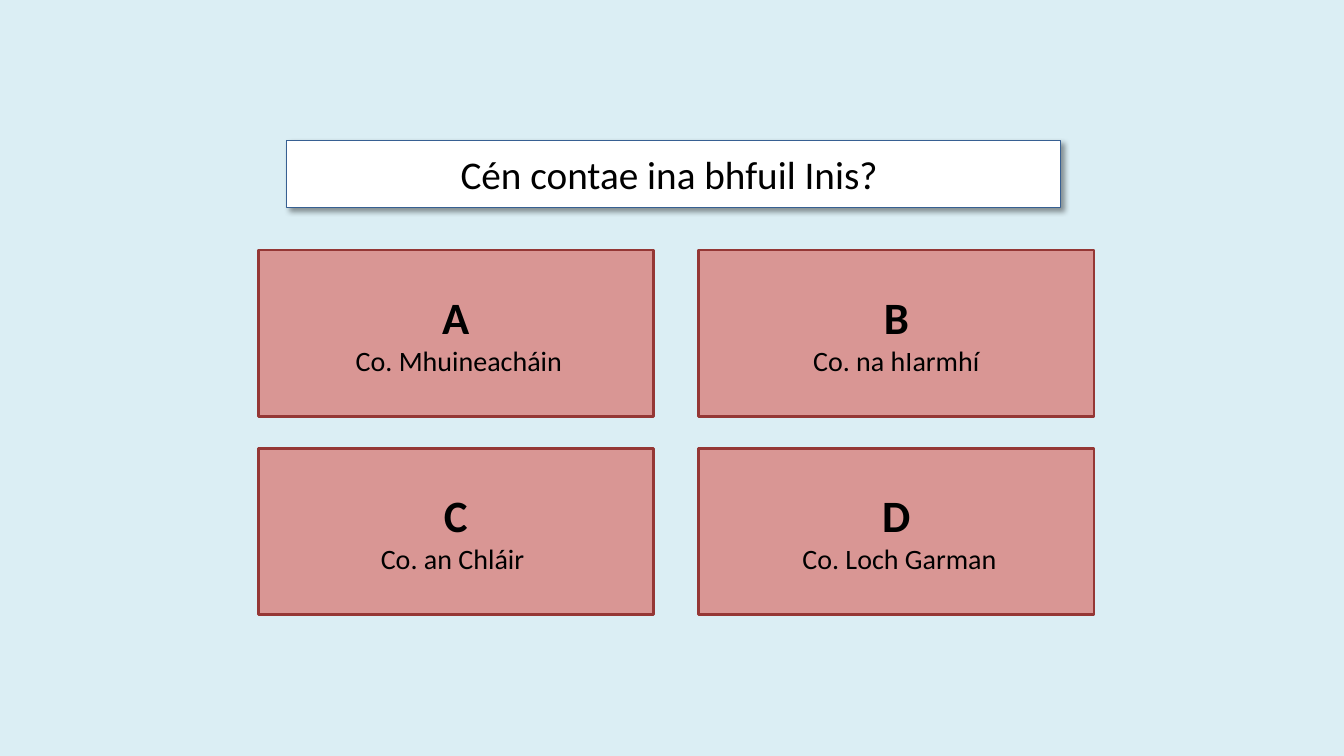
from lxml.etree import SubElement
from pptx import Presentation
from pptx.dml.color import RGBColor
from pptx.enum.shapes import MSO_SHAPE as Preset
from pptx.enum.text import MSO_ANCHOR as Anchor, PP_ALIGN as Align
from pptx.oxml.ns import qn
from pptx.util import Inches, Pt

COLOURS = {
    "background": "DBEEF4",
    "answer": "D99694",
    "answer_edge": "953735",
    "question": "FFFFFF",
    "question_edge": "376092",
    "text": "000000",
    "shadow": "000000",
}
QUESTION = "Cén contae ina bhfuil Inis? "
ANSWERS = {
    "A": " Co. Mhuineacháin",
    "B": " Co. na hIarmhí ",
    "C": "Co. an Chláir ",
    "D": " Co. Loch Garman",
}
COLUMNS, ROWS = 2, 2
COLUMN_GAP, ROW_GAP = 0.45, 0.32


def colour(name):
    return RGBColor.from_string(COLOURS[name])


def add_panel(slide, box, fill, edge, edge_width):
    panel = slide.shapes.add_shape(Preset.RECTANGLE, *map(Inches, box))
    panel.shadow.inherit = False
    panel.fill.solid()
    panel.fill.fore_color.rgb = colour(fill)
    panel.line.color.rgb = colour(edge)
    panel.line.width = Pt(edge_width)
    panel.text_frame.word_wrap = True
    panel.text_frame.vertical_anchor = Anchor.MIDDLE
    return panel


def write(paragraph, text, size, bold=False, before=0):
    paragraph.alignment = Align.CENTER
    paragraph.space_before = Pt(before)
    run = paragraph.add_run()
    run.text = text
    run.font.name = "Calibri"
    run.font.size = Pt(size)
    run.font.bold = bold
    run.font.color.rgb = colour("text")


def cast_shadow(panel):
    effects = panel.element.spPr.find(qn("a:effectLst"))
    shadow = SubElement(effects, qn("a:outerShdw"), blurRad=str(Pt(4)),
                        dist=str(Pt(3)), dir="2700000", algn="tl", rotWithShape="0")
    tint = SubElement(shadow, qn("a:srgbClr"), val=COLOURS["shadow"])
    SubElement(tint, qn("a:alpha"), val="40000")


def add_question(slide, box):
    panel = add_panel(slide, box, "question", "question_edge", 0.75)
    cast_shadow(panel)
    write(panel.text_frame.paragraphs[0], QUESTION, 28, before=5.6)


def add_answers(slide, box):
    left, top, width, height = box
    card_width = (width - (COLUMNS - 1) * COLUMN_GAP) / COLUMNS
    card_height = (height - (ROWS - 1) * ROW_GAP) / ROWS
    for index, (letter, county) in enumerate(ANSWERS.items()):
        row, column = divmod(index, COLUMNS)
        card_box = (left + column * (card_width + COLUMN_GAP),
                    top + row * (card_height + ROW_GAP), card_width, card_height)
        card = add_panel(slide, card_box, "answer", "answer_edge", 2)
        write(card.text_frame.paragraphs[0], letter, 32, bold=True)
        write(card.text_frame.add_paragraph(), county, 20)


def main():
    deck = Presentation()
    deck.slide_width, deck.slide_height = Inches(13.33), Inches(7.5)
    slide = deck.slides.add_slide(deck.slide_layouts[6])
    slide.background.fill.solid()
    slide.background.fill.fore_color.rgb = colour("background")
    add_answers(slide, (2.56, 2.48, 8.29, 3.62))
    add_question(slide, (2.84, 1.39, 7.68, 0.67))
    deck.save("out.pptx")


if __name__ == "__main__":
    main()
